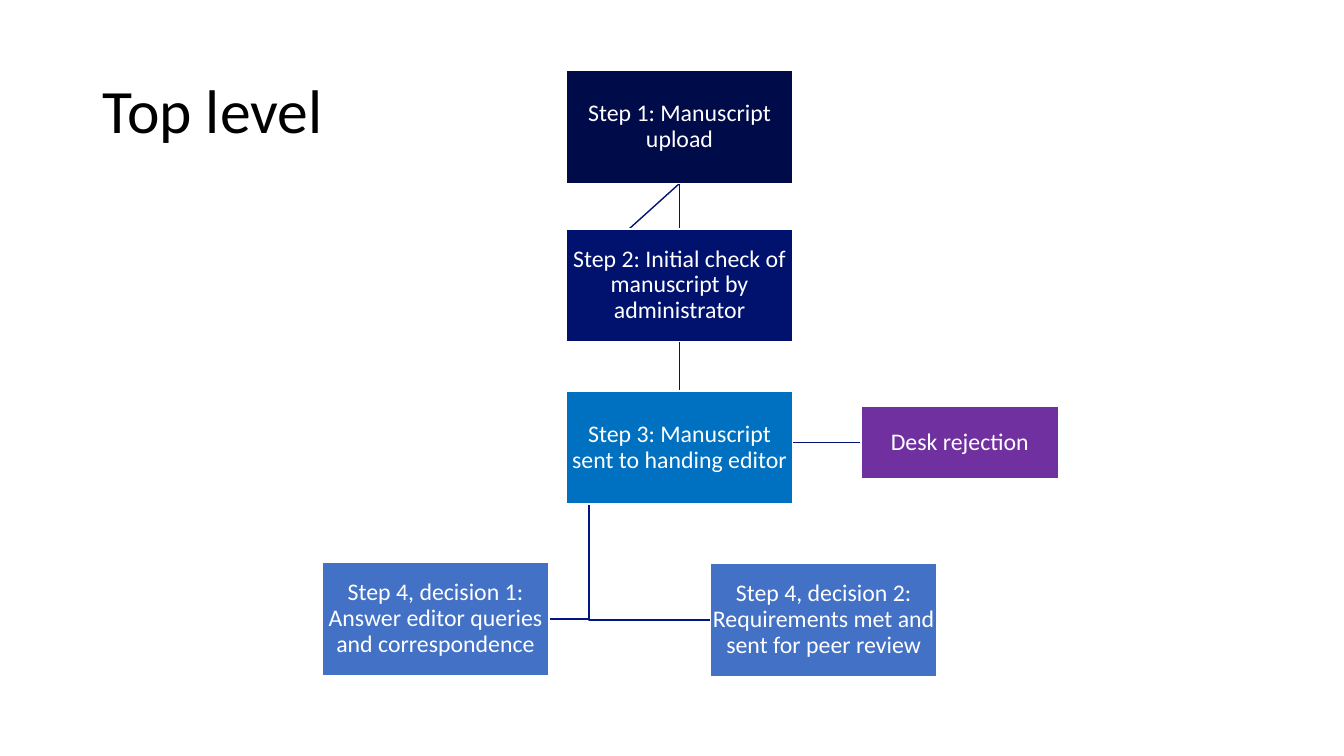
"""Build the top-level manuscript workflow slide."""
from pptx import Presentation
from pptx import util as u
from pptx.dml.color import RGBColor
from pptx.enum import shapes, text
from pptx.oxml.xmlchemy import OxmlElement

PX = 9144
BLACK = RGBColor(0x00, 0x00, 0x00)
WHITE = RGBColor(0xFF, 0xFF, 0xFF)
MIDNIGHT = RGBColor(0x00, 0x0C, 0x49)
NAVY = RGBColor(0x01, 0x12, 0x6E)
BLUE = RGBColor(0x00, 0x70, 0xC0)
SOFT_BLUE = RGBColor(0x42, 0x71, 0xC6)
PURPLE = RGBColor(0x70, 0x30, 0xA0)
LINK_TOP = RGBColor(0x01, 0x13, 0x75)
LINK_BOTTOM = RGBColor(0x01, 0x16, 0x85)

STEP_SIZE = (224, 112)
STEP_LEFT = 562
CENTRE = STEP_LEFT + STEP_SIZE[0] // 2

LINKS = [
    ([(CENTRE, 182), (CENTRE, 439), (854, 439)], LINK_TOP),
    ([(CENTRE, 182), (STEP_LEFT, 283)], LINK_TOP),
    ([(584, 500), (584, 614), (545, 614)], LINK_BOTTOM),
    ([(584, 500), (584, 615), (705, 615)], LINK_BOTTOM),
    ([(CENTRE, 182), (CENTRE, 388)], LINK_TOP),
]
STEPS = [
    ("Step 1: Manuscript upload", (STEP_LEFT, 70), STEP_SIZE, MIDNIGHT),
    ("Step 3: Manuscript sent to handing editor", (STEP_LEFT, 388), STEP_SIZE, BLUE),
    ("Step 4, decision 2: Requirements met and sent for peer review",
     (705, 559), STEP_SIZE, SOFT_BLUE),
    ("Step 4, decision 1: Answer editor queries and correspondence",
     (320, 558), STEP_SIZE, SOFT_BLUE),
    ("Step 2: Initial check of manuscript by administrator",
     (STEP_LEFT, 227), STEP_SIZE, NAVY),
    ("Desk rejection", (854, 403), (196, 72), PURPLE),
]


def px(*lengths):
    """Turn pixel lengths into EMU."""
    return [u.Emu(length * PX) for length in lengths]


def set_all(target, values):
    """Set each named attribute of the target."""
    for name, value in values.items():
        setattr(target, name, value)


def style_line(shape, color):
    """Give a shape a one-point line."""
    shape.line.color.rgb = color
    shape.line.width = u.Pt(1)


def write(box, words, size, color, align, margins):
    """Write one vertically centred paragraph in a box."""
    frame = box.text_frame
    set_all(frame, {"word_wrap": True, "vertical_anchor": text.MSO_ANCHOR.MIDDLE, **margins})
    para = frame.paragraphs[0]
    set_all(para, {"alignment": align, "line_spacing": 0.9})
    span = para.add_run()
    span.text = words
    set_all(span.font, {"name": "Calibri", "size": u.Pt(size)})
    span.font.color.rgb = color


def add_title(page, words):
    """Add the slide title."""
    box = page.shapes.add_textbox(*px(92, 40, 1150, 145))
    write(box, words, 44, BLACK, text.PP_ALIGN.LEFT, {})


def add_link(page, points, color):
    """Join the points with a straight connector or an open elbow."""
    start, *rest = [px(*point) for point in points]
    if len(rest) == 1:
        link = page.shapes.add_connector(shapes.MSO_CONNECTOR.STRAIGHT, *start, *rest[0])
        link._element.spPr.append(OxmlElement("a:effectLst"))
    else:
        builder = page.shapes.build_freeform(*start)
        builder.add_line_segments(rest, close=False)
        link = builder.convert_to_shape()
        link.fill.background()
        link.shadow.inherit = False
    style_line(link, color)


def add_step(page, words, corner, size, fill):
    """Add one filled step with its label."""
    box = page.shapes.add_shape(shapes.MSO_SHAPE.RECTANGLE, *px(*corner, *size))
    box.shadow.inherit = False
    box.fill.solid()
    box.fill.fore_color.rgb = fill
    style_line(box, WHITE)
    margins = {f"margin_{side}": u.Emu(PX) for side in ("left", "top", "right", "bottom")}
    write(box, words, 17, WHITE, text.PP_ALIGN.CENTER, margins)


def main():
    """Build and save the deck."""
    deck = Presentation()
    deck.slide_width, deck.slide_height = px(1333, 750)
    page = deck.slides.add_slide(deck.slide_layouts[6])
    add_title(page, "Top level")
    for link in LINKS:
        add_link(page, *link)
    for step in STEPS:
        add_step(page, *step)
    deck.save("out.pptx")


if __name__ == "__main__":
    main()
